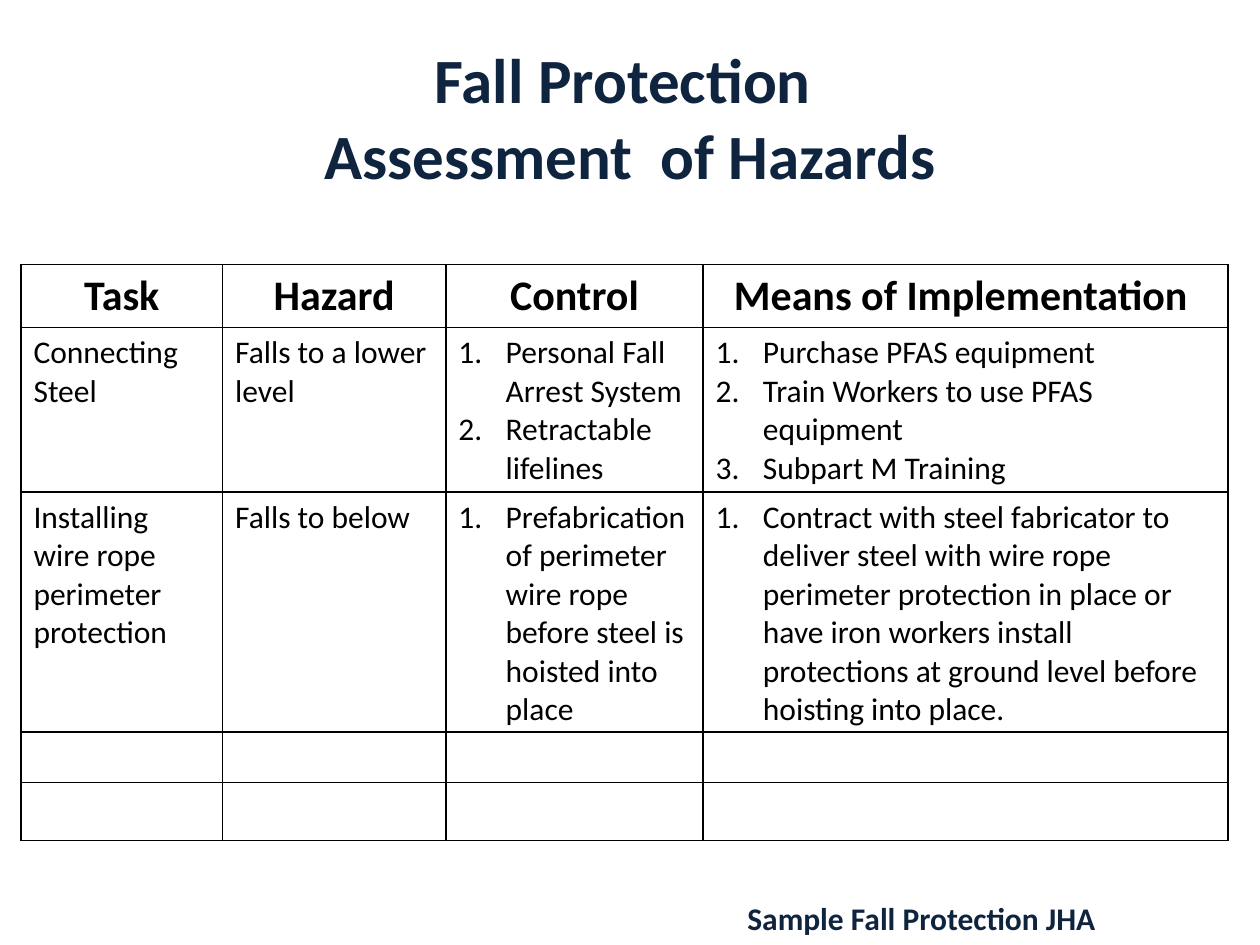
from lxml.etree import SubElement
from pptx import Presentation
from pptx.dml.color import RGBColor
from pptx.enum.text import MSO_ANCHOR, PP_ALIGN
from pptx.oxml import parse_xml
from pptx.oxml.ns import nsdecls, qn
from pptx.util import Pt

NAVY = RGBColor(0x0F, 0x24, 0x3E)
BLACK = RGBColor(0, 0, 0)
FONT = "Calibri"

TITLE = ["Fall Protection ", "Assessment  of Hazards"]
NOTE = "Sample Fall Protection JHA"
HEADS = ["Task", "Hazard", "Control", "Means of Implementation "]
TASKS = [
    (
        ["Connecting", "Steel"],
        ["Falls to a lower level"],
        ["Personal Fall Arrest System", "Retractable lifelines"],
        [
            "Purchase PFAS equipment",
            "Train Workers to use PFAS equipment",
            "Subpart M Training",
        ],
    ),
    (
        ["Installing  wire rope perimeter protection"],
        ["Falls to below"],
        ["Prefabrication of perimeter wire rope before steel is hoisted into place"],
        [
            "Contract with steel fabricator to deliver steel with wire rope "
            "perimeter protection in place or have iron workers install "
            "protections at ground level before hoisting into place."
        ],
    ),
]
WIDTHS = [115.2, 127.6, 147, 300]
HEIGHTS = [36, 94, 137, 29, 33]
LISTS = (2, 3)


def add_run(para, text, size, color, bold=False):
    run = para.add_run()
    run.text = text
    font = run.font
    font.name, font.size, font.bold = FONT, Pt(size), bold
    font.color.rgb = color


def add_box(slide, left, top, width, height):
    frame = slide.shapes.add_textbox(Pt(left), Pt(top), Pt(width), Pt(height)).text_frame
    frame.word_wrap = True
    return frame


def add_number(para):
    props = para._p.get_or_add_pPr()
    props.set("marL", str(Pt(27)))
    props.set("indent", str(Pt(-27)))
    SubElement(props, qn("a:buFont"), typeface="+mj-lt")
    SubElement(props, qn("a:buAutoNum"), type="arabicPeriod")


def set_edges(cell):
    cell.fill.background()
    props = cell._tc.get_or_add_tcPr()
    for spot, side in enumerate("LRTB"):
        props.insert(spot, parse_xml(
            f'<a:ln{side} {nsdecls("a")} w="{Pt(1)}"><a:solidFill>'
            f'<a:srgbClr val="{BLACK}"/></a:solidFill></a:ln{side}>'
        ))


def fill_cell(cell, lines, col):
    frame = cell.text_frame
    for spot, line in enumerate(lines):
        para = frame.add_paragraph() if spot else frame.paragraphs[0]
        if col in LISTS:
            add_number(para)
        add_run(para, line, 18, BLACK)


def add_grid(slide):
    grid = slide.shapes.add_table(
        len(HEIGHTS), len(WIDTHS), Pt(12), Pt(151.2), Pt(sum(WIDTHS)), Pt(sum(HEIGHTS))
    ).table
    grid.first_row = grid.horz_banding = False
    for col, width in zip(grid.columns, WIDTHS):
        col.width = Pt(width)
    for row, height in zip(grid.rows, HEIGHTS):
        row.height = Pt(height)
    for cell in grid.iter_cells():
        set_edges(cell)
    for col, head in enumerate(HEADS):
        para = grid.cell(0, col).text_frame.paragraphs[0]
        para.alignment = PP_ALIGN.CENTER
        add_run(para, head, 24, BLACK, True)
    for row, task in enumerate(TASKS, 1):
        for col, lines in enumerate(task):
            fill_cell(grid.cell(row, col), lines, col)


def main():
    deck = Presentation()
    deck.slide_width, deck.slide_height = Pt(720), Pt(540)
    slide = deck.slides.add_slide(deck.slide_layouts[6])

    frame = add_box(slide, 36, 21.6, 648, 90)
    frame.vertical_anchor = MSO_ANCHOR.MIDDLE
    para = frame.paragraphs[0]
    para.alignment = PP_ALIGN.CENTER
    for spot, line in enumerate(TITLE):
        if spot:
            para.add_line_break()
        add_run(para, line, 36, NAVY, True)

    add_grid(slide)

    note = add_box(slide, 420, 510, 288, 29)
    add_run(note.paragraphs[0], NOTE, 18, NAVY, True)
    deck.save("out.pptx")


if __name__ == "__main__":
    main()
